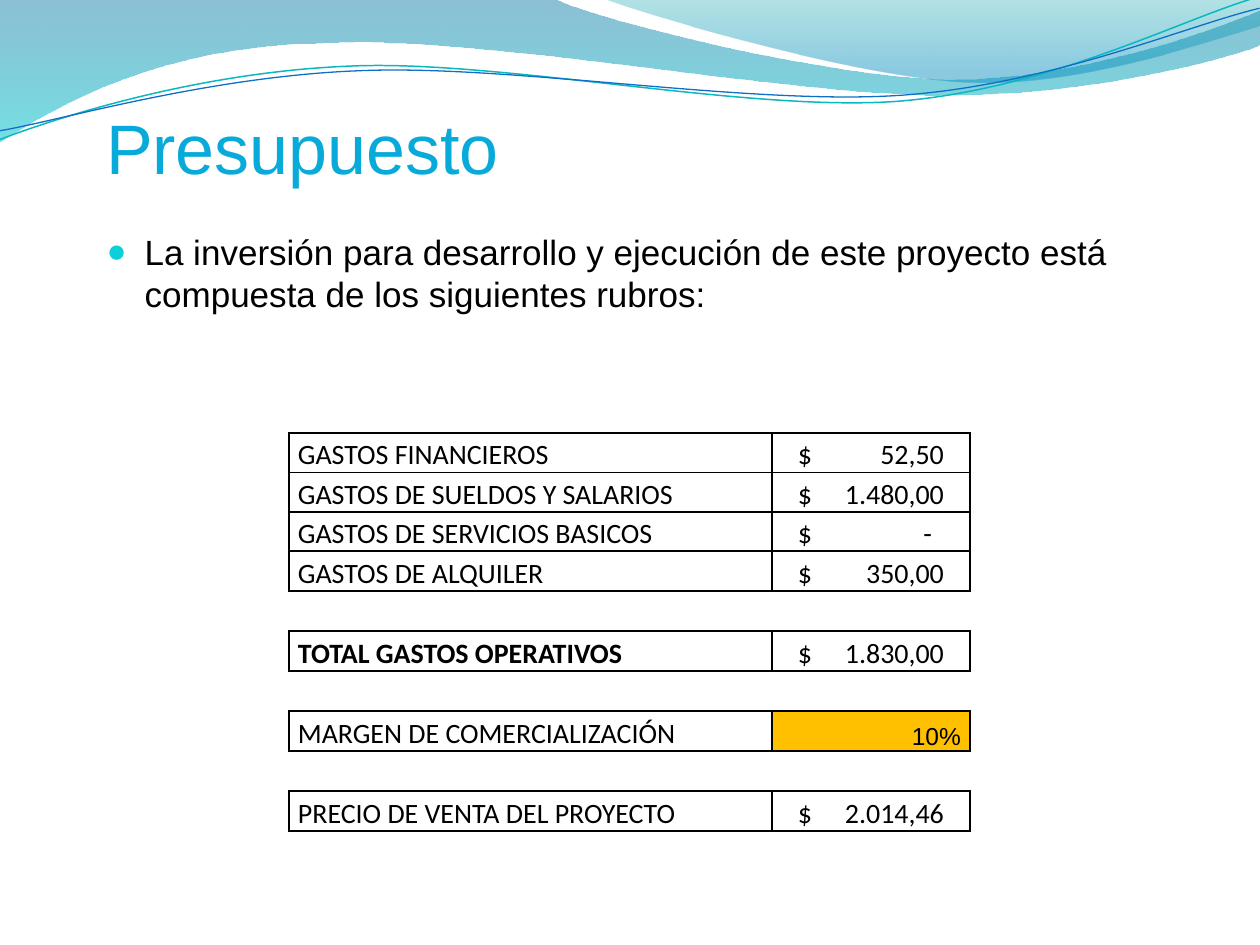
import pptx
import pptx.util
import pptx.dml.color
import pptx.enum.text
import pptx.oxml
import pptx.oxml.ns
from lxml import etree

RGB = pptx.dml.color.RGBColor
ALIGN = pptx.enum.text.PP_ALIGN
ANCHOR = pptx.enum.text.MSO_ANCHOR
qn = pptx.oxml.ns.qn
Pt = pptx.util.Pt

SCALE = 914400 / 126  # EMU in one px
TILT = 357.3          # turn of the thin curves

BLACK = RGB(0, 0, 0)
SKY = RGB(0x07, 0xAA, 0xD8)
CYAN = RGB(0x0B, 0xD0, 0xD9)
AMBER = RGB(0xFF, 0xC0, 0x00)
TEAL = RGB(0x0A, 0xB8, 0xBF)
BLUE = RGB(0x0F, 0x6F, 0xC6)

# Gradient stops: position, colour, opacity in percent
DEEP = [(0, RGB(0x00, 0x74, 0xA1), 45), (1, RGB(0x00, 0xC6, 0xCF), 55)]
PALE = [(0, RGB(0x00, 0xA1, 0xA9), 30), (0.8, RGB(0x00, 0x8B, 0xBF), 45)]

# Outlines: two numbers are a point, six are a Bezier curve
WIDE = [(0, 0), (554, -1), (600, 21, 837, 79, 955, 79),
        (1074, 79, 1207, 33, 1260, 11), (1261, 45),
        (1239, 55, 1096, 96, 940, 95), (783, 95, 481, 35, 324, 43),
        (162, 45, 58, 105, -1, 142), (0, 0)]
SLIM = [(604, -1), (641, 14, 859, 78, 969, 82),
        (1079, 87, 1211, 40, 1260, 26), (1260, 0), (604, -1)]
UPPER = [(-3, 110), (58, 90, 199, 52, 350, 53),
         (499, 53, 745, 118, 896, 114), (1049, 109, 1184, 45, 1260, 27)]
LOWER = [(-2, 101), (57, 94, 207, 57, 357, 58),
         (509, 58, 750, 112, 902, 108), (1052, 104, 1188, 52, 1262, 38)]

# Label and value; None is a gap between blocks
ROWS = [("GASTOS FINANCIEROS", "$\t52,50"),
        ("GASTOS DE SUELDOS Y SALARIOS", "$\t1.480,00"),
        ("GASTOS DE SERVICIOS BASICOS", "$\t-"),
        ("GASTOS DE ALQUILER", "$\t350,00"),
        None,
        ("TOTAL GASTOS OPERATIVOS", "$\t1.830,00"),
        None,
        ("MARGEN DE COMERCIALIZACIÓN", "10%"),
        None,
        ("PRECIO DE VENTA DEL PROYECTO", "$\t2.014,46")]


def px(num):
    return pptx.util.Emu(round(num * SCALE))


def place(shape, left, top, width, height):
    shape.left, shape.top = px(left), px(top)
    shape.width, shape.height = px(width), px(height)


def style(para, size, face, color, bold=False):
    for run in para.runs:
        run.font.size = Pt(size)
        run.font.name = face
        run.font.color.rgb = color
        run.font.bold = bold


def bend(shape, path):
    """Join each three lines that stand for a curve into one Bezier."""
    lines = iter(list(shape.element.spPr.iter(qn("a:lnTo"))))
    for seg in path[1:]:
        group = [next(lines) for _ in range(len(seg) // 2)]
        if len(group) < 3:
            continue
        curve = etree.Element(qn("a:cubicBezTo"))
        group[0].addprevious(curve)
        for line in group:
            curve.append(line[0])
            line.getparent().remove(line)


def draw(slide, path, close):
    pts = [(px(seg[i]), px(seg[i + 1]))
           for seg in path for i in range(0, len(seg), 2)]
    pen = slide.shapes.build_freeform(*pts[0])
    pen.add_line_segments(pts[1:], close=close)
    shape = pen.convert_to_shape()
    bend(shape, path)
    shape.shadow.inherit = False
    return shape


def add_wave(slide, path, stops):
    shape = draw(slide, path, True)
    shape.fill.gradient()
    shape.fill.gradient_angle = 270
    for stop, (pos, color, _) in zip(shape.fill.gradient_stops, stops):
        stop.position = pos
        stop.color.rgb = color
    marks = shape.element.spPr.iter(qn("a:srgbClr"))
    for mark, (_, _, alpha) in zip(marks, stops):
        etree.SubElement(mark, qn("a:alpha"), val=str(alpha * 1000))
    shape.line.fill.background()


def add_curve(slide, path, color, width):
    shape = draw(slide, path, False)
    shape.rotation = TILT
    shape.fill.background()
    shape.line.color.rgb = color
    shape.line.width = Pt(width)


def set_title(shape, text):
    place(shape, 106, 86, 1050, 103)
    frame = shape.text_frame
    frame.text = text
    frame.vertical_anchor = ANCHOR.BOTTOM
    frame.margin_left = frame.margin_right = frame.margin_bottom = 0
    frame.paragraphs[0].alignment = ALIGN.LEFT
    style(frame.paragraphs[0], 40, "Arial", SKY)


def set_body(shape, text):
    place(shape, 94, 224, 1111, 110)
    shape.text_frame.text = text
    para = shape.text_frame.paragraphs[0]
    para.space_before = Pt(4)
    style(para, 20, "Arial", BLACK)
    # Round bullet with a hanging indent
    props = para._p.get_or_add_pPr()
    props.set("marL", str(px(38)))
    props.set("indent", str(-px(38)))
    tint = etree.SubElement(props, qn("a:buClr"))
    etree.SubElement(tint, qn("a:srgbClr"), val=str(CYAN))
    etree.SubElement(props, qn("a:buSzPct"), val="95000")
    etree.SubElement(props, qn("a:buFont"), typeface="Arial")
    etree.SubElement(props, qn("a:buChar"), char="●")


def set_edges(cell, sides):
    props = cell._tc.get_or_add_tcPr()
    for side in "LRTB":
        edge = etree.SubElement(props, qn("a:ln" + side), w=str(Pt(1)))
        if side in sides:
            fill = etree.SubElement(edge, qn("a:solidFill"))
            etree.SubElement(fill, qn("a:srgbClr"), val=str(BLACK))
        else:
            etree.SubElement(edge, qn("a:noFill"))


def add_tab(para, pos):
    tabs = etree.SubElement(para._p.get_or_add_pPr(), qn("a:tabLst"))
    etree.SubElement(tabs, qn("a:tab"), pos=str(px(pos)), algn="r")


def set_cell(cell, text):
    cell.vertical_anchor = ANCHOR.BOTTOM
    cell.text_frame.text = text
    para = cell.text_frame.paragraphs[0]
    para.line_spacing = 1.15
    para.space_after = Pt(6)
    if text.startswith("$"):
        cell.margin_left = px(26)
        add_tab(para, 134 if text.endswith("-") else 146)
    if text.endswith("%"):
        para.alignment = ALIGN.RIGHT
        cell.fill.solid()
        cell.fill.fore_color.rgb = AMBER
        style(para, 14, "Arial", BLACK)
    else:
        style(para, 16, "Calibri", BLACK, text.startswith("TOTAL"))


def add_costs(slide):
    frame = slide.shapes.add_table(len(ROWS), 2, px(289), px(433),
                                   px(681), px(397))
    table = frame.table
    table.first_row = table.horz_banding = False
    for col, width in zip(table.columns, (483, 198)):
        col.width = px(width)
    for num, (row, texts) in enumerate(zip(table.rows, ROWS)):
        row.height = px(39 if num < 3 else 40)
        for cell, text in zip(row.cells, texts or ("", "")):
            cell.margin_top = cell.margin_bottom = 0
            cell.margin_left = cell.margin_right = px(9)
            set_edges(cell, "LRTB" if texts else "TB")
            cell.fill.background()
            if text:
                set_cell(cell, text)


def main():
    deck = pptx.Presentation()
    deck.slide_width, deck.slide_height = px(1260), px(945)
    slide = deck.slides.add_slide(deck.slide_layouts[1])
    title, body = slide.placeholders

    # Waves across the top
    add_wave(slide, WIDE, DEEP)
    add_wave(slide, SLIM, PALE)
    add_curve(slide, UPPER, TEAL, 0.85)
    add_curve(slide, LOWER, BLUE, 0.75)

    # Text in front of the waves
    set_title(title, "Presupuesto")
    set_body(body, "La inversión para desarrollo y ejecución de este "
                   "proyecto está compuesta de los siguientes rubros:")
    for shape in (title, body):
        slide.shapes._spTree.append(shape.element)

    # Budget table
    add_costs(slide)
    deck.save("out.pptx")


if __name__ == "__main__":
    main()
